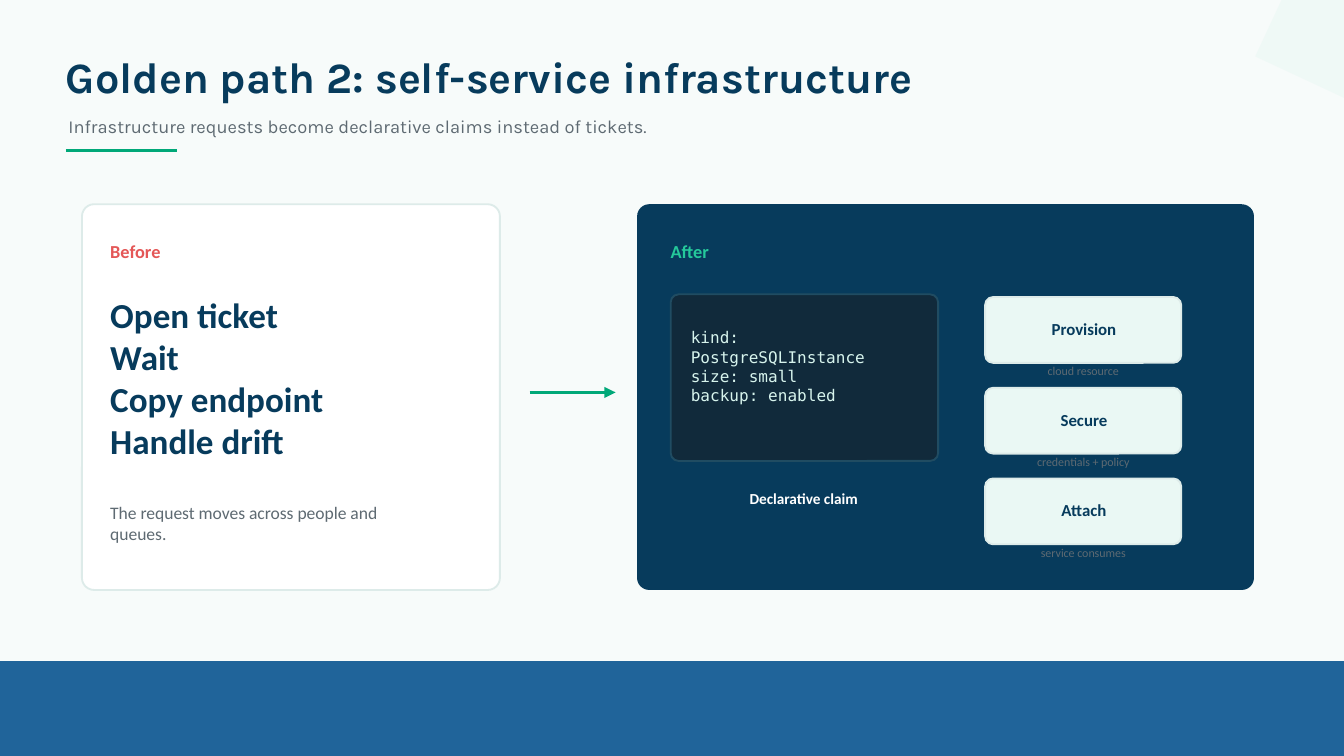
from functools import partial

from lxml.etree import SubElement
from pptx import Presentation
from pptx.dml.color import RGBColor
from pptx.enum.shapes import MSO_CONNECTOR as CONN, MSO_SHAPE as SHAPE
from pptx.enum.text import MSO_ANCHOR as ANCHOR, PP_ALIGN as ALIGN
from pptx.oxml.ns import qn
from pptx.util import Inches, Pt

W, H = Inches(10), Inches(5.625)
COLS = 100
NAVY, GREEN, GRAY, MINT, EDGE, WHITE = "073B5C", "00A878", "5E6A72", "EAF8F4", "DDEBE9", "FFFFFF"
STEPS = [
    ("Provision", "cloud resource"),
    ("Secure", "credentials + policy"),
    ("Attach", "service consumes"),
]


def grid(*cells):
    """Turn counts of square grid cells, 100 across the slide, into lengths."""
    return [round(W * n / COLS) for n in cells]


def paint(color_format, hex_color):
    """Set a fill or line to a solid hex colour."""
    color_format.solid()
    color_format.fore_color.rgb = RGBColor.from_string(hex_color)


def add_shape(s, kind, box, fill, line=None, radius=None):
    """Add a filled preset shape with an optional outline and corner radius."""
    sp = s.shapes.add_shape(kind, *grid(*box))
    sp.shadow.inherit = False
    paint(sp.fill, fill)
    if line:
        paint(sp.line.fill, line)
        sp.line.width = Pt(1)
    else:
        sp.line.fill.background()
    if radius:
        sp.adjustments[0] = radius / min(box[2:])
    return sp


def add_text(s, box, lines, size, color, font="Calibri", bold=False, align=ALIGN.LEFT):
    """Add a vertically centred text box without margins, one paragraph a line."""
    tf = s.shapes.add_textbox(*grid(*box)).text_frame
    tf.word_wrap = True
    tf.vertical_anchor = ANCHOR.MIDDLE
    tf.margin_left = tf.margin_right = tf.margin_top = tf.margin_bottom = 0
    for i, line in enumerate(lines):
        p = tf.add_paragraph() if i else tf.paragraphs[0]
        p.alignment = align
        r = p.add_run()
        r.text = line
        r.font.name, r.font.size, r.font.bold = font, Pt(size), bold
        paint(r.font.fill, color)


def add_rule(s, x1, x2, y, arrow=False):
    """Add a horizontal green line, with an arrowhead if asked."""
    c = s.shapes.add_connector(CONN.STRAIGHT, *grid(x1, y, x2, y))
    paint(c.line.fill, GREEN)
    c.line.width = Pt(2)
    if arrow:
        SubElement(c.line._get_or_add_ln(), qn("a:tailEnd"), type="triangle")
    SubElement(c._element.spPr, qn("a:effectLst"))


def add_backdrop(s):
    """Add the background, the bottom band and the pale corner wedge."""
    paint(s.background.fill, "F7FBFA")
    add_shape(s, SHAPE.RECTANGLE, (0, 49.2, COLS, 7.05), "20649A")
    wedge = add_shape(s, SHAPE.ARC, (81, -8.2, 24.8, 24.8), MINT)
    wedge.rotation = 25
    color = wedge._element.spPr.find(qn("a:solidFill"))[0]
    SubElement(color, qn("a:alpha"), val="60000")


def add_header(s):
    """Add the title, the subtitle and the rule below them."""
    text = partial(add_text, s, font="Karla")
    text((4.9, 3.6, 80.3, 4.1), ["Golden path 2: self-service infrastructure"], 23.2, NAVY, bold=True)
    text((5.1, 8.2, 75, 2.4),
         ["Infrastructure requests become declarative claims instead of tickets."], 9.8, GRAY)
    add_rule(s, 4.9, 13.2, 11.2)


def add_panel(s, x, width, label, label_x, label_color, fill, line=None):
    """Add a rounded panel with its coloured label."""
    add_shape(s, SHAPE.ROUNDED_RECTANGLE, (x, 15.2, width, 28.7), fill, line, 0.9)
    add_text(s, (label_x, 17.8, 9, 1.8), [label], 9.8, label_color, bold=True)


def add_step(s, y, name, note):
    """Add a step card with its name and the note under it."""
    text = partial(add_text, s, align=ALIGN.CENTER)
    add_shape(s, SHAPE.ROUNDED_RECTANGLE, (73.3, y, 14.6, 4.9), MINT, EDGE, 0.6)
    text((74.1, y + 1.4, 13.1, 1.9), [name], 9, NAVY, bold=True)
    text((74.2, y + 3.9, 12.8, 3.2), [note], 6.4, GRAY)


def add_before(s):
    """Add the panel for the ticket workflow."""
    add_panel(s, 6.1, 31.1, "Before", 8.2, "E45757", WHITE, EDGE)
    add_text(s, (8.2, 22.1, 19.5, 12),
             ["Open ticket", "Wait", "Copy endpoint", "Handle drift"], 18.8, NAVY, bold=True)
    add_text(s, (8.2, 37.5, 22.1, 2.8), ["The request moves across people and queues."], 9.4, GRAY)


def add_after(s):
    """Add the panel for the declarative claim and its steps."""
    add_panel(s, 47.4, 45.9, "After", 49.9, "25C99B", NAVY)
    add_shape(s, SHAPE.ROUNDED_RECTANGLE, (49.9, 21.9, 19.9, 12.4), "112A3B", "204C62", 0.6)
    add_text(s, (51.4, 24, 16.7, 6.5),
             ["kind: PostgreSQLInstance", "size: small", "backup: enabled"],
             8.6, "D7F4ED", font="DejaVu Sans Mono")
    add_text(s, (50.6, 36.2, 18.4, 1.7), ["Declarative claim"], 8.2, WHITE,
             bold=True, align=ALIGN.CENTER)
    for i, (name, note) in enumerate(STEPS):
        add_step(s, 22.1 + 6.75 * i, name, note)


def main():
    """Build the slide and save it."""
    prs = Presentation()
    prs.slide_width, prs.slide_height = W, H
    s = prs.slides.add_slide(prs.slide_layouts[6])
    add_backdrop(s)
    add_header(s)
    add_before(s)
    add_rule(s, 39.4, 45.8, 29.2, arrow=True)
    add_after(s)
    prs.save("out.pptx")


if __name__ == "__main__":
    main()
